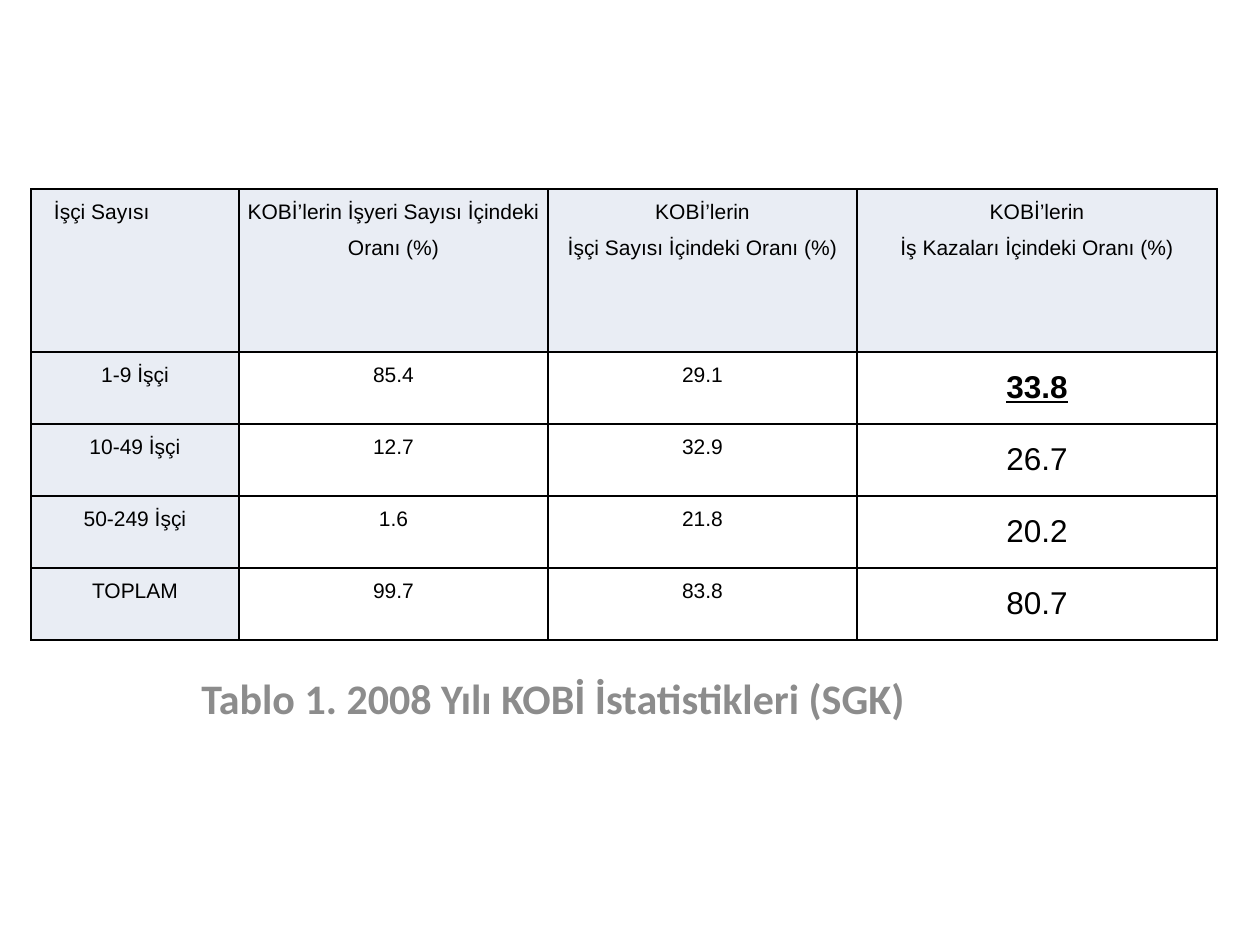
from lxml import etree
from pptx import Presentation
from pptx import util as u
from pptx.dml.color import RGBColor
from pptx.enum import text
from pptx.oxml.ns import qn

SCALE = 914400 / 126
BLACK = RGBColor(0x00, 0x00, 0x00)
WHITE = RGBColor(0xFF, 0xFF, 0xFF)
PALE_BLUE = RGBColor(0xE9, 0xED, 0xF4)
GREY = RGBColor(0x8C, 0x8C, 0x8C)

COLUMNS = [208, 309, 309, 360]
ROWS = [163, 72, 72, 72, 72]
HEADER_INDENT = 23
STATISTICS = [
    ["İşçi Sayısı", "KOBİ’lerin İşyeri Sayısı İçindeki Oranı (%)",
     "KOBİ’lerin\nİşçi Sayısı İçindeki Oranı (%)",
     "KOBİ’lerin\nİş Kazaları İçindeki Oranı (%)"],
    ["1-9 İşçi", "85.4", "29.1", "33.8"],
    ["10-49 İşçi", "12.7", "32.9", "26.7"],
    ["50-249 İşçi", "1.6", "21.8", "20.2"],
    ["TOPLAM", "99.7", "83.8", "80.7"],
]

BODY = {"name": "Arial", "size": u.Pt(12), "bold": False}
ACCIDENTS = {**BODY, "size": u.Pt(18)}
HIGHLIGHT = {**ACCIDENTS, "bold": True, "underline": True}
CAPTION = {"name": "Calibri", "size": u.Pt(24), "bold": True}


def px(length):
    return u.Emu(round(length * SCALE))


def write(frame, content, font, color, align, spacing):
    frame.word_wrap = True
    for index, line in enumerate(content.split("\n")):
        para = frame.paragraphs[0] if index == 0 else frame.add_paragraph()
        para.alignment = align
        para.line_spacing = spacing
        span = para.add_run()
        span.text = line
        for name, value in font.items():
            setattr(span.font, name, value)
        span.font.color.rgb = color


def add_borders(cell, color, width):
    properties = cell._tc.get_or_add_tcPr()
    for side in ("lnL", "lnR", "lnT", "lnB"):
        line = etree.SubElement(properties, qn(f"a:{side}"), w=str(u.Pt(width)))
        fill = etree.SubElement(line, qn("a:solidFill"))
        etree.SubElement(fill, qn("a:srgbClr"), val=str(color))


def fill_cell(cell, content, row, column):
    is_label = row == 0 or column == 0
    is_corner = row == 0 and column == 0
    font = BODY
    if column == 3 and row > 0:
        font = HIGHLIGHT if row == 1 else ACCIDENTS
    align = text.PP_ALIGN.JUSTIFY if is_corner else text.PP_ALIGN.CENTER

    for side in ("left", "right", "top", "bottom"):
        setattr(cell, f"margin_{side}", 0)
    if is_corner:
        cell.margin_left = px(HEADER_INDENT)
    add_borders(cell, BLACK, 1)
    cell.fill.solid()
    cell.fill.fore_color.rgb = PALE_BLUE if is_label else WHITE
    write(cell.text_frame, content, font, BLACK, align, 1.5)


def add_statistics(page, left, top):
    table = page.shapes.add_table(
        len(ROWS), len(COLUMNS), px(left), px(top),
        px(sum(COLUMNS)), px(sum(ROWS))).table
    for column, width in zip(table.columns, COLUMNS):
        column.width = px(width)
    for row, height in zip(table.rows, ROWS):
        row.height = px(height)
    for row, values in enumerate(STATISTICS):
        for column, content in enumerate(values):
            fill_cell(table.cell(row, column), content, row, column)


def add_caption(page, content, left, top, width, height):
    box = page.shapes.add_textbox(px(left), px(top), px(width), px(height))
    write(box.text_frame, content, CAPTION, GREY, text.PP_ALIGN.LEFT, 0.9)


def main():
    deck = Presentation()
    deck.slide_width, deck.slide_height = px(1260), px(945)
    page = deck.slides.add_slide(deck.slide_layouts[6])

    # Caption under the table
    add_caption(page, "Tablo 1. 2008 Yılı KOBİ İstatistikleri (SGK)",
                189, 672, 882, 105)
    # Table of shares by number of workers
    add_statistics(page, 31, 189)

    deck.save("out.pptx")


if __name__ == "__main__":
    main()
